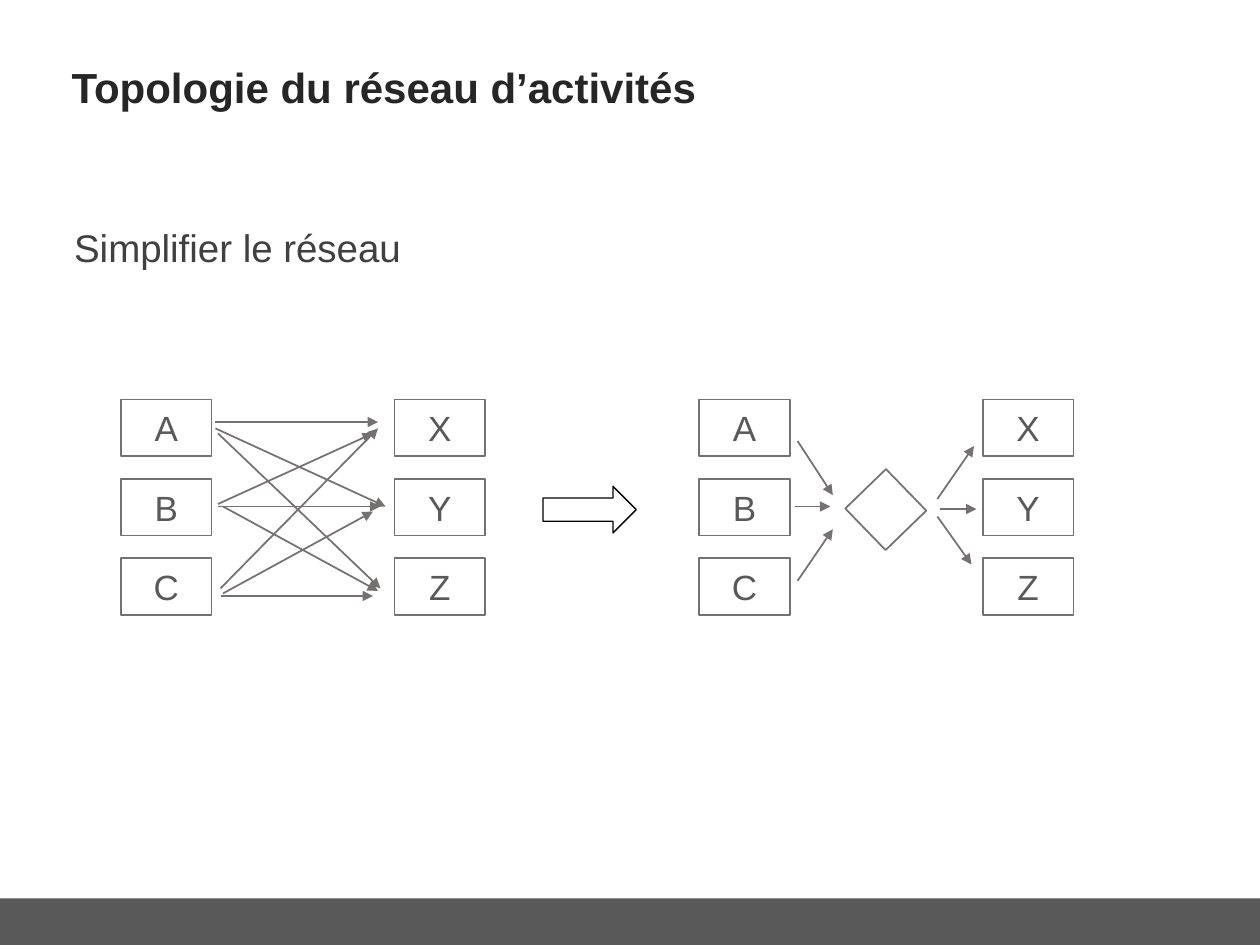
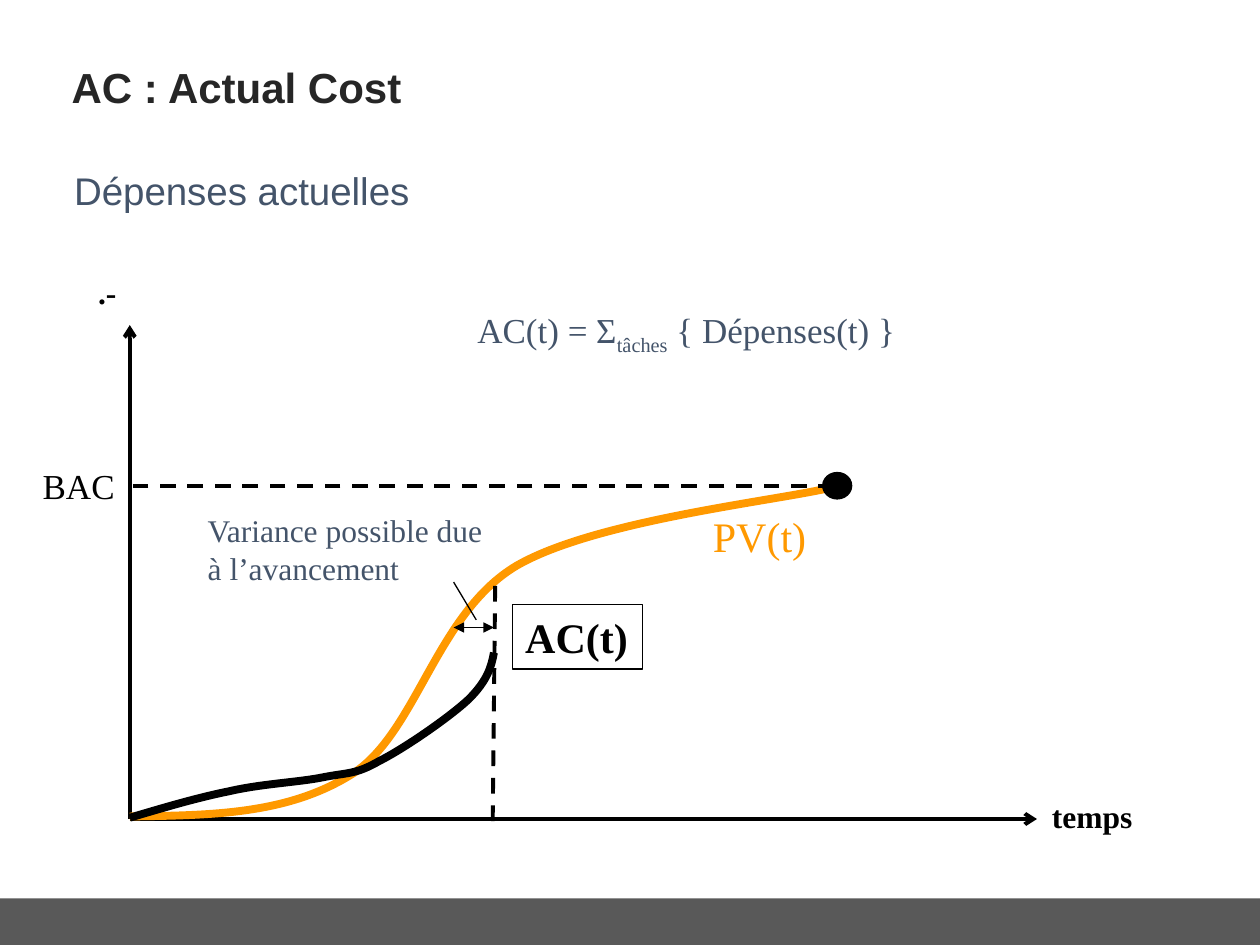
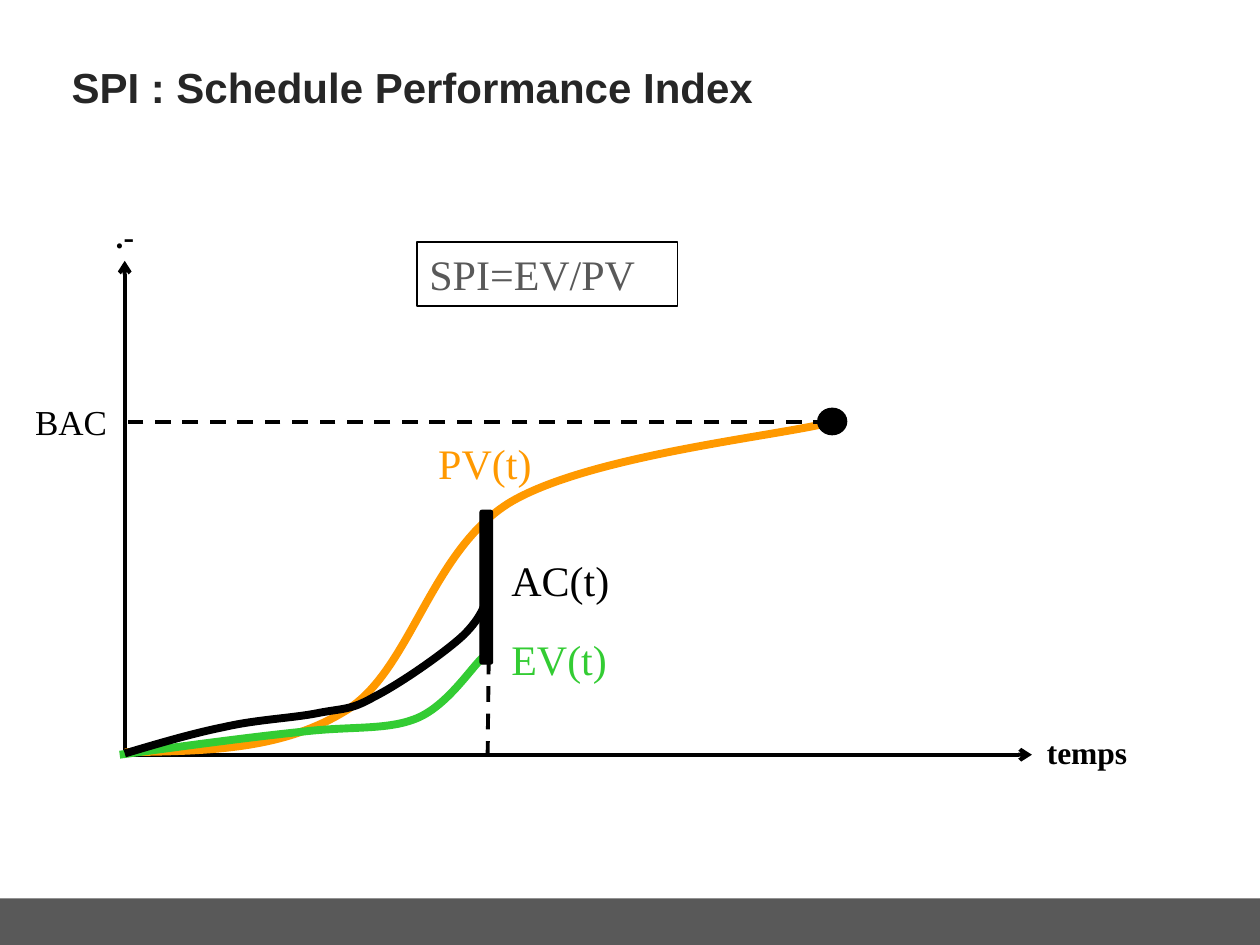
"""Build three project-management slides: a network topology and two earned-value charts."""
from dataclasses import dataclass

from lxml import etree
from pptx import Presentation
from pptx.dml.color import RGBColor
from pptx.enum.dml import MSO_LINE
from pptx.enum.shapes import MSO_CONNECTOR, MSO_SHAPE
from pptx.enum.text import MSO_ANCHOR, PP_ALIGN
from pptx.oxml.ns import qn
from pptx.util import Inches, Pt

STRAIGHT = MSO_CONNECTOR.STRAIGHT
RECTANGLE = MSO_SHAPE.RECTANGLE
ROUNDED = MSO_SHAPE.ROUNDED_RECTANGLE
ELLIPSE = MSO_SHAPE.OVAL
RIGHT_ARROW = MSO_SHAPE.RIGHT_ARROW
DASH = MSO_LINE.DASH
TOP, MIDDLE = MSO_ANCHOR.TOP, MSO_ANCHOR.MIDDLE
LEFT, CENTER = PP_ALIGN.LEFT, PP_ALIGN.CENTER


@dataclass(frozen=True)
class Theme:
    sans: str = "Arial"
    serif: str = "Times New Roman"
    title: str = "262626"
    body: str = "404040"
    gray: str = "595959"
    outline: str = "767171"
    slate: str = "44546A"
    black: str = "000000"
    planned: str = "FF9900"
    earned: str = "33CC33"
    title_size: int = 24
    body_size: int = 22
    formula_size: int = 20
    note_size: int = 18
    thin: float = 0.75
    medium: float = 1
    axis: float = 2.25
    curve: float = 4.5


THEME = Theme()

TITLE_AREA = (0.47, 0.41, 8.47, 0.56)
BAND_AREA = (0, 7.13, 10, 0.37)

TASK_SIZE = (0.72, 0.45)
TASK_TOP, TASK_STEP = 3.17, 0.63
TASK_COLUMNS = [(0.96, "ABC"), (3.13, "XYZ"), (5.55, "ABC"), (7.8, "XYZ")]
TASK_ARROWS = [
    ((1.71, 3.35), (3, 3.35)),
    ((1.71, 3.4), (3.06, 4.02)),
    ((1.73, 3.44), (3.02, 4.67)),
    ((1.73, 4), (2.96, 3.44)),
    ((1.73, 4.02), (3.02, 4.02)),
    ((1.77, 4.02), (3, 4.69)),
    ((1.75, 4.67), (3, 3.4)),
    ((1.77, 4.71), (2.96, 4.06)),
    ((1.75, 4.73), (2.96, 4.73)),
    ((6.33, 3.5), (6.61, 3.93)),
    ((6.31, 4.02), (6.59, 4.02)),
    ((6.33, 4.61), (6.61, 4.2)),
    ((7.44, 3.96), (7.73, 3.54)),
    ((7.46, 4.04), (7.75, 4.04)),
    ((7.44, 4.1), (7.71, 4.48)),
]

PLANNED_CURVE = [
    (0, -0.02), (0.63, -0.03), (1.25, -0.03), (1.77, -0.36),
    (2.28, -0.69), (2.43, -1.63), (3.07, -2.01),
    (3.71, -2.38), (5.19, -2.53), (5.61, -2.64),
]
ACTUAL_CURVE = [
    (0, -0.01), (0.27, -0.09), (0.54, -0.17), (0.79, -0.22),
    (1.05, -0.28), (1.33, -0.29), (1.53, -0.33),
    (1.73, -0.37), (1.79, -0.35), (1.98, -0.46),
    (2.18, -0.56), (2.54, -0.81), (2.69, -0.95),
    (2.84, -1.1), (2.87, -1.21), (2.89, -1.32),
]
EARNED_CURVE = [
    (-0.04, 0), (0.48, -0.07), (1, -0.14), (1.39, -0.18),
    (1.79, -0.23), (2.08, -0.19), (2.32, -0.29),
    (2.56, -0.39), (2.75, -0.69), (2.84, -0.77),
]
COST_ORIGIN = (1.03, 6.5)
INDEX_ORIGIN = (0.99, 5.99)

COST_LABELS = [
    (".-", (0.68, 2.12, 0.35, 0.4), THEME.note_size, THEME.black, True),
    ("temps", (8.25, 6.28, 0.84, 0.4), THEME.note_size, THEME.black, True),
    ("BAC", (0.24, 3.64, 0.77, 0.43), THEME.formula_size, THEME.black, False),
    ("PV(t)", (5.56, 4, 0.94, 0.5), THEME.title_size, THEME.planned, False),
]
INDEX_LABELS = [
    (".-", (0.82, 1.67, 0.35, 0.4), THEME.note_size, THEME.black, True),
    ("temps", (8.21, 5.77, 0.84, 0.4), THEME.note_size, THEME.black, True),
    ("BAC", (0.18, 3.13, 0.77, 0.43), THEME.formula_size, THEME.black, False),
    ("PV(t)", (3.38, 3.42, 0.94, 0.5), THEME.title_size, THEME.planned, False),
    ("AC(t)", (3.96, 4.35, 0.98, 0.5), THEME.title_size, THEME.black, False),
    ("EV(t)", (3.96, 4.98, 0.96, 0.5), THEME.title_size, THEME.earned, False),
]
FORMULA = [("AC(t) = Σ", 0), ("tâches", -25), (" { Dépenses(t) }", 0)]


def inches(values):
    return [Inches(value) for value in values]


def write(shape, spans, size, color, font=THEME.serif, bold=False,
          align=LEFT, anchor=TOP, wrap=True):
    frame = shape.text_frame
    layout = {
        "word_wrap": wrap, "vertical_anchor": anchor,
        "margin_left": Inches(0.1), "margin_right": Inches(0.1),
        "margin_top": Inches(0.05), "margin_bottom": Inches(0.05),
    }
    for name, value in layout.items():
        setattr(frame, name, value)
    para = frame.paragraphs[0]
    para.alignment = align
    for text, baseline in spans:
        span = para.add_run()
        span.text = text
        style = {"name": font, "size": Pt(size), "bold": bold}
        for name, value in style.items():
            setattr(span.font, name, value)
        span.font.color.rgb = RGBColor.from_string(color)
        if baseline:
            span.font._element.set("baseline", str(baseline * 1000))


def add_label(page, text, area, size, color, bold=False, **style):
    box = page.shapes.add_textbox(*inches(area))
    spans = [(text, 0)] if isinstance(text, str) else text
    write(box, spans, size, color, bold=bold, **style)


def paint(shape, fill=None, line=None, width=THEME.thin):
    shape.shadow.inherit = False
    for part, color in ((shape.fill, fill), (shape.line.fill, line)):
        if color:
            part.solid()
            part.fore_color.rgb = RGBColor.from_string(color)
        else:
            part.background()
    if line:
        shape.line.width = Pt(width)


def add_box(page, kind, area, **colors):
    shape = page.shapes.add_shape(kind, *inches(area))
    paint(shape, **colors)
    return shape


def add_line(page, start, end, color=THEME.black, width=THEME.thin,
             head=None, tail=None, dash=None):
    line = page.shapes.add_connector(STRAIGHT, *inches(start + end))
    line.line.color.rgb = RGBColor.from_string(color)
    line.line.width = Pt(width)
    if dash:
        line.line.dash_style = dash
    properties = line._element.spPr
    outline = properties.find(qn("a:ln"))
    for tag, arrow in (("a:headEnd", head), ("a:tailEnd", tail)):
        if arrow:
            etree.SubElement(outline, qn(tag), type=arrow)
    etree.SubElement(properties, qn("a:effectLst"))


def add_curve(page, knots, origin, color):
    points = [tuple(inches((origin[0] + x, origin[1] + y))) for x, y in knots]
    builder = page.shapes.build_freeform(*points[0])
    builder.add_line_segments(points[1:], close=False)
    curve = builder.convert_to_shape()
    paint(curve, line=color, width=THEME.curve)
    outline = next(curve._element.iter(qn("a:path")))
    segments = outline.findall(qn("a:lnTo"))
    for first in range(0, len(segments), 3):
        bezier = etree.SubElement(outline, qn("a:cubicBezTo"))
        for segment in segments[first:first + 3]:
            bezier.append(segment[0])
            outline.remove(segment)


def add_page(deck, title):
    page = deck.slides.add_slide(deck.slide_layouts[6])
    add_box(page, RECTANGLE, BAND_AREA, fill=THEME.gray)
    add_label(page, title, TITLE_AREA, THEME.title_size, THEME.title,
              bold=True, font=THEME.sans, anchor=MIDDLE)
    return page


def add_cost_chart(page, origin, labels, curves):
    left, base = origin

    def at(x, y):
        return left + x, base + y

    for end in (at(0, -3.92), at(7.2, 0)):
        add_line(page, origin, end, width=THEME.axis, tail="arrow")
    for knots, color in curves:
        add_curve(page, knots, origin, color)
    add_box(page, ELLIPSE, (*at(5.5, -2.75), 0.23, 0.21),
            fill=THEME.black, line=THEME.black)
    for start, end in (((2.9, -1.85), (2.88, 0.06)), ((5.59, -2.64), (-0.01, -2.64))):
        add_line(page, at(*start), at(*end), width=THEME.axis, dash=DASH)
    for label in labels:
        add_label(page, *label, wrap=False)


def add_topology(deck):
    page = add_page(deck, "Topologie du réseau d’activités")
    add_label(page, "Simplifier le réseau", (0.49, 1.73, 9, 0.88),
              THEME.body_size, THEME.body, font=THEME.sans)
    for left, names in TASK_COLUMNS:
        for row, name in enumerate(names):
            task = add_box(page, RECTANGLE, (left, TASK_TOP + row * TASK_STEP, *TASK_SIZE),
                           line=THEME.outline, width=THEME.medium)
            write(task, [(name, 0)], THEME.formula_size, THEME.gray,
                  font=THEME.sans, align=CENTER, anchor=MIDDLE)
    hub = add_box(page, RECTANGLE, (6.8, 3.82, 0.46, 0.45),
                  line=THEME.outline, width=THEME.medium)
    hub.rotation = 45.9
    for start, end in TASK_ARROWS:
        add_line(page, start, end, THEME.outline, THEME.medium, tail="triangle")
    add_box(page, RIGHT_ARROW, (4.31, 3.86, 0.74, 0.37), line=THEME.black)


def add_actual_cost(deck):
    page = add_page(deck, "AC : Actual Cost")
    add_label(page, "Dépenses actuelles", (0.49, 1.28, 5.73, 0.82),
              THEME.body_size, THEME.slate, font=THEME.sans)
    add_cost_chart(page, COST_ORIGIN, COST_LABELS,
                   [(PLANNED_CURVE, THEME.planned), (ACTUAL_CURVE, THEME.black)])
    actual = add_box(page, RECTANGLE, (4.07, 4.8, 1.03, 0.51), line=THEME.black)
    write(actual, [("AC(t)", 0)], THEME.title_size, THEME.black, bold=True, wrap=False)
    add_label(page, FORMULA, (3.69, 2.4, 4.3, 0.44), THEME.formula_size, THEME.slate)
    add_label(page, "Variance possible due à l’avancement", (1.55, 4.01, 2.49, 0.7),
              THEME.note_size, THEME.slate)
    add_line(page, (3.6, 4.98), (3.92, 4.98), head="triangle", tail="triangle")
    add_line(page, (3.6, 4.62), (3.78, 4.92))


def add_schedule_index(deck):
    page = add_page(deck, "SPI : Schedule Performance Index")
    add_cost_chart(page, INDEX_ORIGIN, INDEX_LABELS,
                   [(PLANNED_CURVE, THEME.planned), (EARNED_CURVE, THEME.earned),
                    (ACTUAL_CURVE, THEME.black)])
    formula = add_box(page, RECTANGLE, (3.31, 1.92, 2.07, 0.51), line=THEME.black)
    write(formula, [("SPI=EV/PV", 0)], THEME.title_size, THEME.gray)
    add_box(page, ROUNDED, (3.81, 4.05, 0.1, 1.22), fill=THEME.black, line=THEME.black)


def main():
    deck = Presentation()
    deck.slide_width, deck.slide_height = Inches(10), Inches(7.5)
    for add_content in (add_topology, add_actual_cost, add_schedule_index):
        add_content(deck)
    deck.save("out.pptx")


if __name__ == "__main__":
    main()
